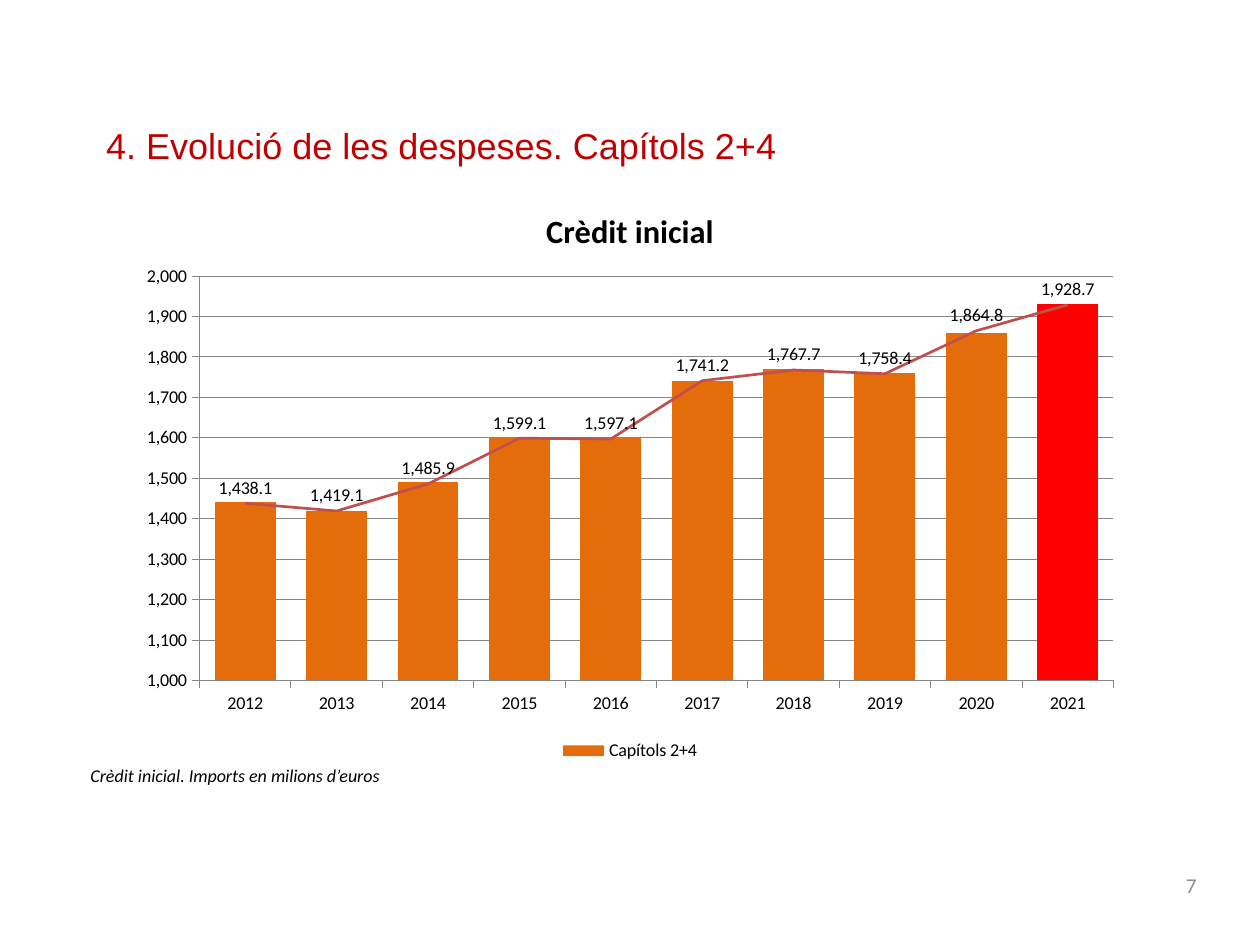
from lxml.etree import SubElement as Sub
from pptx import Presentation
from pptx.chart.data import CategoryChartData as Data
from pptx.dml.color import RGBColor as RGB
from pptx.enum.chart import XL_CHART_TYPE as Kind
from pptx.enum.chart import XL_LABEL_POSITION as Place
from pptx.enum.chart import XL_LEGEND_POSITION as Side
from pptx.enum.chart import XL_MARKER_STYLE as Mark
from pptx.enum.chart import XL_TICK_MARK as Tick
from pptx.enum.text import MSO_ANCHOR as Anchor
from pptx.enum.text import PP_ALIGN as Align
from pptx.oxml import parse_xml
from pptx.oxml.ns import nsdecls, qn
from pptx.util import Inches, Pt

BLACK = RGB(0x00, 0x00, 0x00)
GREY = RGB(0x8C, 0x8C, 0x8C)
RULE = RGB(0x86, 0x86, 0x86)
CRIMSON = RGB(0xC0, 0x00, 0x00)
ORANGE = RGB(0xE4, 0x6C, 0x0A)
RED = RGB(0xFF, 0x00, 0x00)
BRICK = RGB(0xC0, 0x50, 0x4D)

YEARS = [str(year) for year in range(2012, 2022)]
COSTS = [1438.1, 1419.1, 1485.9, 1599.1, 1597.1,
         1741.2, 1767.7, 1758.4, 1864.8, 1928.7]
TENS = [round(cost, -1) for cost in COSTS]


class Page:
    """Holds the text style and the current slide."""

    def __init__(self, deck, face="Calibri", size=10):
        self.slide = deck.slides.add_slide(deck.slide_layouts[6])
        self.face, self.size = face, size

    def style(self, font, size=None, color=BLACK, face=None):
        font.name = face or self.face
        font.size = Pt(size or self.size)
        font.color.rgb = color

    def text(self, words, box, wrap=True, align=Align.LEFT,
             anchor=Anchor.TOP, italic=False, **look):
        frame = self.slide.shapes.add_textbox(*map(Inches, box)).text_frame
        frame.text = words
        frame.word_wrap = wrap
        frame.vertical_anchor = anchor
        par = frame.paragraphs[0]
        par.alignment = align
        font = par.runs[0].font
        font.italic = italic
        self.style(font, **look)

    def chart(self, title, cats, series, box):
        data = Data(number_format="#,##0.0")
        data.categories = cats
        for name, vals in series:
            data.add_series(name, vals)
        chart = self.slide.shapes.add_chart(
            Kind.COLUMN_CLUSTERED, *map(Inches, box), data).chart
        self.style(chart.font)
        chart.has_title = True
        frame = chart.chart_title.text_frame
        frame.text = title
        font = frame.paragraphs[0].runs[0].font
        self.style(font, size=18)
        font.bold = True
        return chart

    def axes(self, chart, low, high, step):
        val, cat = chart.value_axis, chart.category_axis
        val.minimum_scale, val.maximum_scale = low, high
        val.major_unit = step
        val.has_major_gridlines = True
        val.tick_labels.number_format = "#,##0"
        val.tick_labels.number_format_is_linked = False
        for axis in (val, cat):
            axis.major_tick_mark = Tick.OUTSIDE
            self.style(axis.tick_labels.font)
        for part in (val, cat, val.major_gridlines):
            part.format.line.color.rgb = RULE
            part.format.line.width = Pt(0.5)

    def bars(self, chart, color, last):
        plot = chart.plots[0]
        plot.gap_width = 50
        plot.vary_by_categories = False
        bars = plot.series[0]
        bars.invert_if_negative = False
        for part, tint in ((bars, color), (bars.points[len(YEARS) - 1], last)):
            part.format.fill.solid()
            part.format.fill.fore_color.rgb = tint

    def trend(self, chart, color):
        # Move the second series to a line plot on the same axes
        bar = chart.plots[0]._element
        row = bar.findall(qn("c:ser"))[1]
        for flag in row.findall(qn("c:invertIfNegative")):
            row.remove(flag)
        line = parse_xml(
            f'<c:lineChart {nsdecls("c")}><c:grouping val="standard"/>'
            '<c:varyColors val="0"/><c:marker val="1"/></c:lineChart>')
        line.insert(2, row)
        for ref in bar.findall(qn("c:axId")):
            Sub(line, qn("c:axId"), val=ref.get("val"))
        bar.addnext(line)

        curve = chart.plots[1].series[0]
        curve.smooth = False
        curve.marker.style = Mark.NONE
        curve.format.line.color.rgb = color
        curve.format.line.width = Pt(1.5)
        tags = curve.data_labels
        tags.show_value = True
        tags.position = Place.ABOVE
        tags.number_format = "#,##0.0"
        tags.number_format_is_linked = False
        self.style(tags.font)

    def legend(self, chart, hide):
        chart.has_legend = True
        key = chart.legend
        key.position = Side.BOTTOM
        key.include_in_layout = False
        self.style(key.font)
        key._element.find(qn("c:legendPos")).addnext(parse_xml(
            f'<c:legendEntry {nsdecls("c")}><c:idx val="{hide}"/>'
            '<c:delete val="1"/></c:legendEntry>'))

    def layout(self, chart, box, area):
        # Fix the inner plot area, in inches from the chart corner
        plot = chart.plots[0]._element.getparent()
        for old in plot.findall(qn("c:layout")):
            plot.remove(old)
        node = parse_xml(
            f'<c:layout {nsdecls("c")}><c:manualLayout>'
            '<c:layoutTarget val="inner"/><c:xMode val="edge"/>'
            '<c:yMode val="edge"/></c:manualLayout></c:layout>')
        for name, size, full in zip("xywh", area, box[2:] * 2):
            Sub(node[0], qn(f"c:{name}"), val=str(size / full))
        plot.insert(0, node)


def main():
    deck = Presentation()
    deck.slide_width, deck.slide_height = Inches(9.72), Inches(7.32)
    page = Page(deck)

    # Page number and heading
    page.text("7", (7.06, 6.63, 2.27, 0.39), align=Align.RIGHT,
              anchor=Anchor.MIDDLE, size=11.7, color=GREY)
    page.text("4. Evolució de les despeses. Capítols 2+4",
              (0.72, 0.9, 7.65, 0.43), size=20, color=CRIMSON, face="Arial")

    # Footnote
    page.text("Crèdit inicial. Imports en milions d’euros",
              (0.6, 5.85, 2.46, 0.27), wrap=False, italic=True)

    # Yearly spending as bars with a line on top
    box = (0.98, 1.42, 7.76, 4.49)
    chart = page.chart("Crèdit inicial", YEARS,
                       [("Capítols 2+4", TENS), ("Series 2", COSTS)], box)
    page.axes(chart, 1000, 2000, 100)
    page.bars(chart, ORANGE, RED)
    page.trend(chart, BRICK)
    page.legend(chart, hide=1)
    page.layout(chart, box, (0.56, 0.71, 7.05, 3.12))

    deck.save("out.pptx")


if __name__ == "__main__":
    main()
